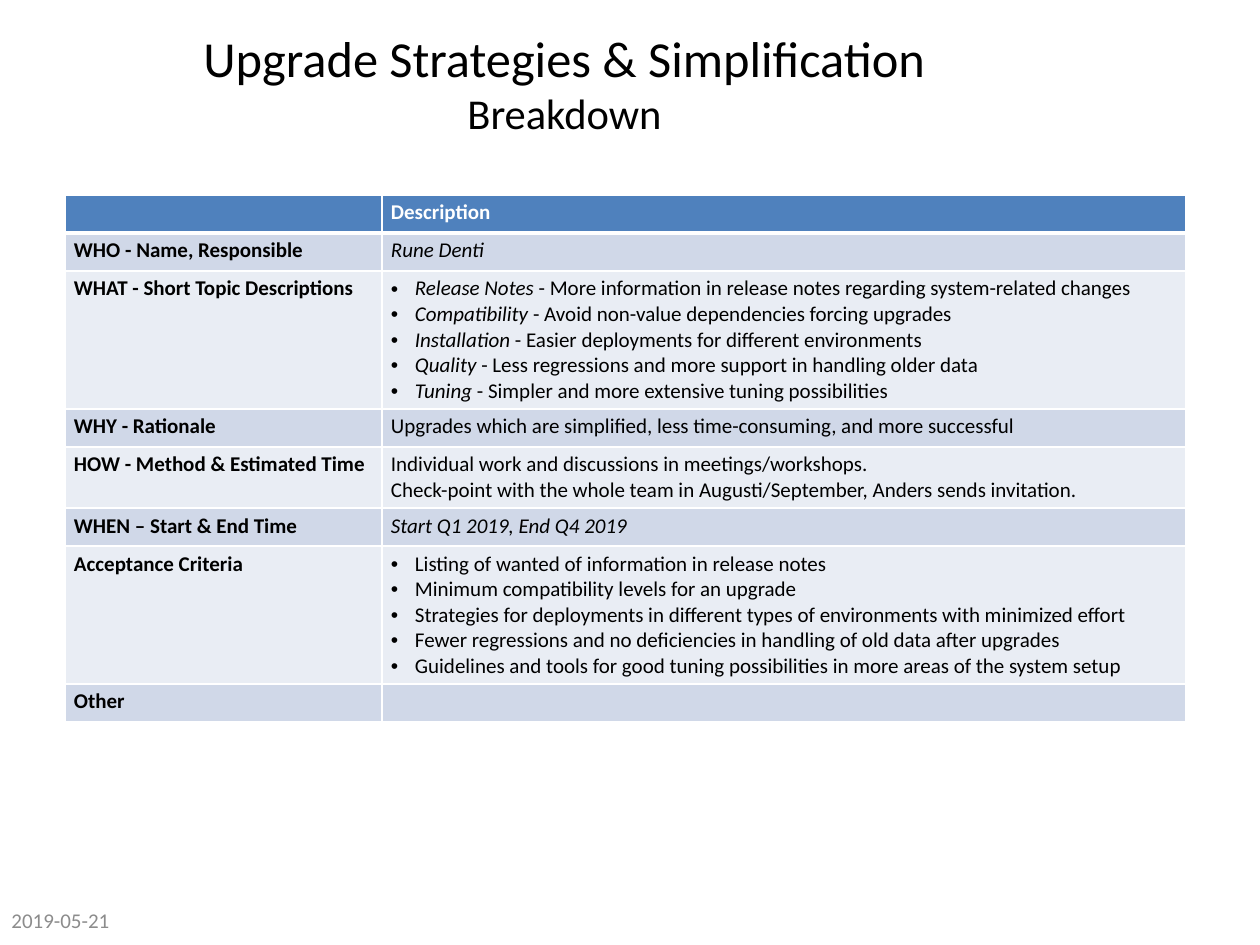
from dataclasses import dataclass

from lxml.etree import SubElement
from pptx import Presentation
from pptx.dml.color import RGBColor
from pptx.enum.text import MSO_ANCHOR as Anchor, MSO_AUTO_SIZE as Fit, PP_ALIGN as Align
from pptx.oxml.ns import qn
from pptx.util import Emu, Pt

SCALE = 914400 / 126
FACE = "Calibri"
BLACK, WHITE, GRAY = "000000", "FFFFFF", "8C8C8C"
HEAD, BANDS = "4F81BD", ("E9EDF4", "D0D8E8")
SIZE = 12


@dataclass
class Line:
    lead: str = ""  # italic part
    rest: str = ""


@dataclass
class Row:
    label: str
    lines: list[Line]
    high: int = 38
    listed: bool = False


ROWS = [
    Row("", [Line(rest="Description")]),
    Row("WHO - Name, Responsible", [Line("Rune Denti")]),
    Row("WHAT - Short Topic Descriptions", [
        Line("Release Notes ", "- More information in release notes regarding system-related changes"),
        Line("Compatibility", " - Avoid non-value dependencies forcing upgrades"),
        Line("Installation", " - Easier deployments for different environments"),
        Line("Quality", " - Less regressions and more support in handling older data"),
        Line("Tuning", " - Simpler and more extensive tuning possibilities"),
    ], 137, True),
    Row("WHY - Rationale", [
        Line(rest="Upgrades which are simplified, less time-consuming, and more successful")]),
    Row("HOW - Method & Estimated Time", [
        Line(rest="Individual work and discussions in meetings/workshops.\v"
                  "Check-point with the whole team in Augusti/September, Anders sends invitation.")], 61),
    Row("WHEN – Start & End Time", [Line("Start Q1 2019, End Q4 2019")]),
    Row("Acceptance Criteria", [
        Line(rest="Listing of wanted of information in release notes"),
        Line(rest="Minimum compatibility levels for an upgrade"),
        Line(rest="Strategies for deployments in different types of environments with minimized effort"),
        Line(rest="Fewer regressions and no deficiencies in handling of old data after upgrades"),
        Line(rest="Guidelines and tools for good tuning possibilities in more areas of the system setup"),
    ], 137, True),
    Row("Other", [Line()]),
]


def px(count: int) -> Emu:
    return Emu(round(count * SCALE))


def color(code: str) -> RGBColor:
    return RGBColor.from_string(code)


def style(run, size: float, code: str, bold: bool = False, slant: bool = False) -> None:
    font = run.font
    font.name, font.size, font.bold, font.italic = FACE, Pt(size), bold, slant
    font.color.rgb = color(code)


def fix_size(para, size: float) -> None:
    """Give line breaks and an empty paragraph the text size."""
    points = str(round(size * 100))
    for gap in para._p.findall(qn("a:br")):
        SubElement(gap, qn("a:rPr"), sz=points)
    if not para.runs:
        SubElement(para._p, qn("a:endParaRPr"), sz=points)


def bullet(para) -> None:
    props = para._p.get_or_add_pPr()
    props.set("marL", str(px(24)))
    props.set("indent", str(-px(24)))
    SubElement(props, qn("a:buFont"), typeface="Arial")
    SubElement(props, qn("a:buChar"), char="•")


def border(cell, top: int, bottom: int) -> None:
    props = cell._tc.get_or_add_tcPr()
    for side, width in (("L", 1), ("R", 1), ("T", top), ("B", bottom)):
        line = SubElement(props, qn(f"a:ln{side}"), w=str(Pt(width)))
        fill = SubElement(line, qn("a:solidFill"))
        SubElement(fill, qn("a:srgbClr"), val=WHITE)


def fill_cell(cell, lines: list[Line], index: int, bold: bool, listed: bool) -> None:
    head = index == 0
    border(cell, 3 if index == 1 else 1, 3 if head else 1)
    cell.fill.solid()
    cell.fill.fore_color.rgb = color(HEAD if head else BANDS[index % 2])
    cell.margin_left = cell.margin_right = px(9)
    cell.margin_top = cell.margin_bottom = px(5)
    frame = cell.text_frame
    for at, line in enumerate(lines):
        para = frame.add_paragraph() if at else frame.paragraphs[0]
        if listed:
            bullet(para)
        para.text = line.lead or line.rest
        if line.lead and line.rest:
            para.add_run().text = line.rest
        for spot, run in enumerate(para.runs):
            style(run, SIZE, WHITE if head else BLACK, bold, bool(line.lead) and spot == 0)
        fix_size(para, SIZE)


def add_grid(slide, rows: list[Row]) -> None:
    wide = (317, 804)
    high = sum(row.high for row in rows)
    table = slide.shapes.add_table(
        len(rows), 2, px(65), px(195), px(sum(wide)), px(high)).table
    table.first_row = table.horz_banding = False
    for col, width in zip(table.columns, wide):
        col.width = px(width)
    for index, row in enumerate(rows):
        table.rows[index].height = px(row.high)
        fill_cell(table.cell(index, 0), [Line(rest=row.label)], index, True, False)
        fill_cell(table.cell(index, 1), row.lines, index, index == 0, row.listed)


def add_date(slide, text: str) -> None:
    box = slide.shapes.add_textbox(px(-1), px(895), px(145), px(50))
    frame = box.text_frame
    frame.word_wrap = True
    frame.vertical_anchor = Anchor.MIDDLE
    frame.text = text
    style(frame.paragraphs[0].runs[0], SIZE, GRAY)


def set_title(slide, text: str) -> None:
    title = slide.shapes.title
    title.left, title.top, title.width, title.height = px(0), px(20), px(1129), px(125)
    frame = title.text_frame
    frame.auto_size = Fit.NONE
    frame.vertical_anchor = Anchor.MIDDLE
    para = frame.paragraphs[0]
    para.text = text
    para.alignment = Align.CENTER
    for run, size in zip(para.runs, (28.8, 24.3)):
        style(run, size, BLACK)
    fix_size(para, 28.8)


def main() -> None:
    deck = Presentation()
    deck.slide_width, deck.slide_height = px(1260), px(945)
    slide = deck.slides.add_slide(deck.slide_layouts[5])
    add_grid(slide, ROWS)
    add_date(slide, "2019-05-21")
    set_title(slide, "Upgrade Strategies & Simplification\vBreakdown")
    deck.save("out.pptx")


if __name__ == "__main__":
    main()
